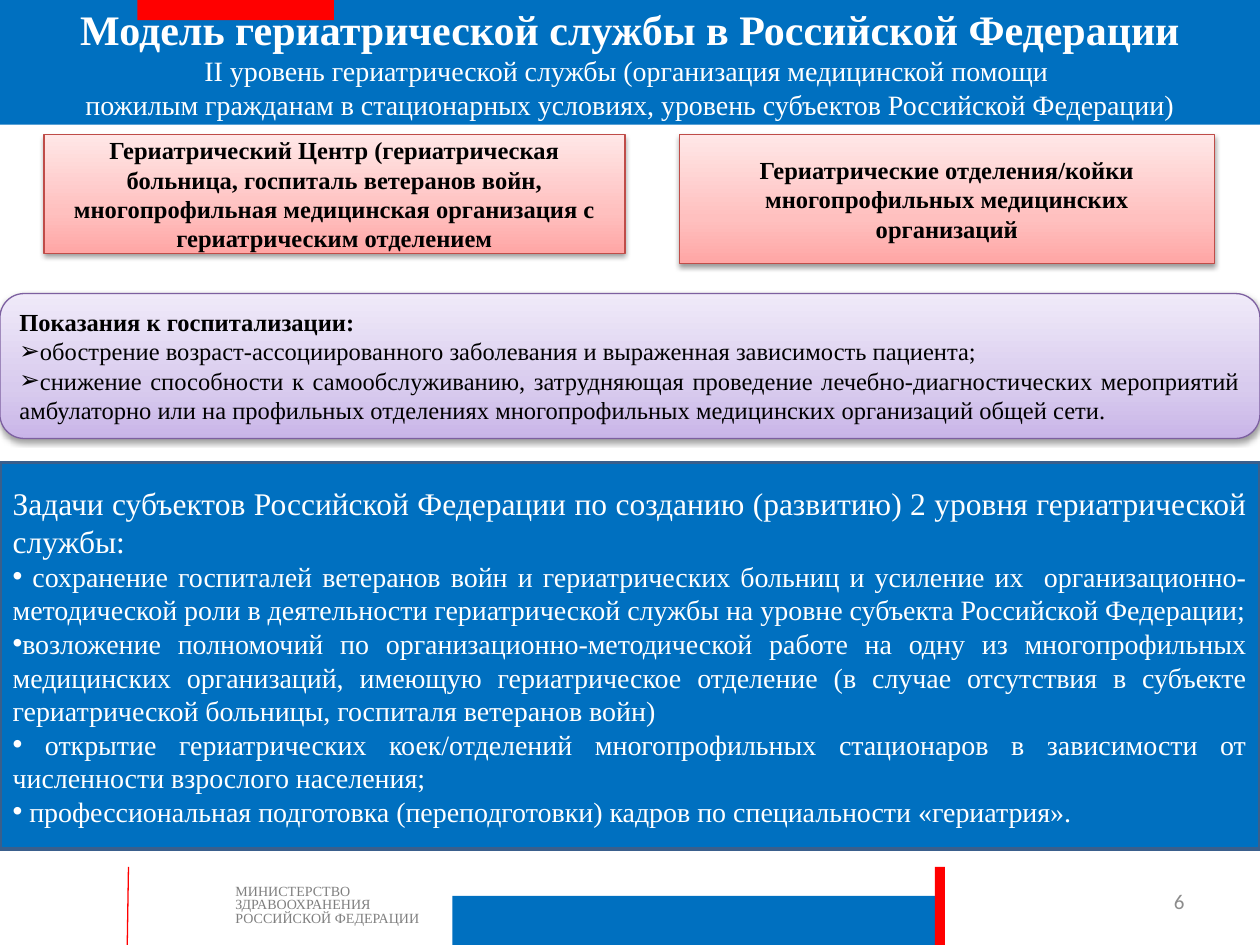
"""Build a slide on the second level of the geriatric service."""
from dataclasses import dataclass

from lxml import etree
from pptx import Presentation
from pptx.dml.color import RGBColor
from pptx.enum.shapes import MSO_CONNECTOR, MSO_SHAPE
from pptx.enum.text import MSO_ANCHOR, MSO_AUTO_SIZE, PP_ALIGN
from pptx.oxml.ns import qn
from pptx.util import Inches, Pt

RECT = MSO_SHAPE.RECTANGLE
ROUND = MSO_SHAPE.FLOWCHART_ALTERNATE_PROCESS
STRAIGHT = MSO_CONNECTOR.STRAIGHT
TOP, MIDDLE = MSO_ANCHOR.TOP, MSO_ANCHOR.MIDDLE
FIXED = MSO_AUTO_SIZE.NONE
LEFT, CENTER, RIGHT, JUSTIFY = PP_ALIGN.LEFT, PP_ALIGN.CENTER, PP_ALIGN.RIGHT, PP_ALIGN.JUSTIFY


@dataclass(frozen=True)
class Theme:
    """Hold the colours, fonts and type sizes."""
    blue: str = "0070C0"
    navy: str = "3A5F8C"
    red: str = "FF0000"
    white: str = "FFFFFF"
    black: str = "000000"
    gray: str = "7F7F7F"
    pale: str = "8C8C8C"
    rose: tuple = ("FFA6A5", "FFC0BF", "FFE7E7")
    rose_edge: str = "BF4C48"
    lilac: tuple = ("C9B5E8", "D8CBEE", "F0EAF9")
    lilac_edge: str = "7D60A0"
    serif: str = "Times New Roman"
    sans: str = "Calibri"
    head: float = 24
    lead: float = 18
    body: float = 16
    card: float = 14
    page: float = 12
    small: float = 8


@dataclass(frozen=True)
class Box:
    """Give a place in inches."""
    left: float
    top: float
    width: float
    height: float

    def place(self) -> tuple:
        """Return the place as lengths."""
        return tuple(Inches(v) for v in (self.left, self.top, self.width, self.height))


@dataclass(frozen=True)
class Line:
    """Describe one paragraph; a line feed is a line break."""
    text: str
    size: float
    color: str
    bold: bool = False
    bullet: str = ""
    font: str = "Times New Roman"
    space: float = 1.0


@dataclass(frozen=True)
class Card:
    """Describe a shaded card with text."""
    box: Box
    kind: int
    shades: tuple
    edge: str
    lines: tuple
    align: int
    anchor: int


T = Theme()
TITLE = (
    Line("Модель гериатрической службы в Российской Федерации", T.head, T.white, True),
    Line("II уровень гериатрической службы (организация медицинской помощи \n"
         "пожилым гражданам в стационарных условиях, уровень субъектов Российской Федерации)",
         T.body, T.white),
)
TASKS = (
    Line("Задачи субъектов Российской Федерации по созданию (развитию) 2 уровня "
         "гериатрической службы:", T.lead, T.white),
    *(Line(text, T.body, T.white, bullet="•") for text in (
        " сохранение госпиталей ветеранов войн и гериатрических больниц и усиление их  "
        "организационно-методической роли в деятельности гериатрической службы на уровне "
        "субъекта Российской Федерации;",
        "возложение полномочий по организационно-методической работе на одну из "
        "многопрофильных медицинских организаций, имеющую гериатрическое отделение (в случае "
        "отсутствия в субъекте гериатрической больницы, госпиталя ветеранов войн)",
        " открытие гериатрических коек/отделений многопрофильных стационаров в зависимости "
        "от численности взрослого населения;",
        " профессиональная подготовка (переподготовки) кадров по специальности «гериатрия».",
    )),
)
SIGNS = (
    Line("Показания к госпитализации:", T.card, T.black, True),
    *(Line(text, T.card, T.black, bullet="➢") for text in (
        "обострение возраст-ассоциированного заболевания и выраженная зависимость пациента;",
        "снижение способности к самообслуживанию, затрудняющая проведение "
        "лечебно-диагностических мероприятий амбулаторно или на профильных отделениях "
        "многопрофильных медицинских организаций общей сети.",
    )),
)
CENTRE = Line("Гериатрический Центр (гериатрическая больница, госпиталь ветеранов войн, "
              "многопрофильная медицинская организация с гериатрическим отделением",
              T.card, T.black, True)
WARDS = Line("Гериатрические отделения/койки многопрофильных медицинских организаций",
             T.card, T.black, True)
CARDS = (
    Card(Box(0, 2.33, 10, 1.15), ROUND, T.lilac, T.lilac_edge, SIGNS, JUSTIFY, TOP),
    Card(Box(0.35, 1.07, 4.61, 0.94), RECT, T.rose, T.rose_edge, (CENTRE,), CENTER, MIDDLE),
    Card(Box(5.39, 1.07, 4.25, 1.02), RECT, T.rose, T.rose_edge, (WARDS,), CENTER, MIDDLE),
)
BARS = (
    (Box(1.09, 0, 1.56, 0.16), T.red),
    (Box(3.59, 7.11, 3.91, 0.39), T.blue),
    (Box(7.42, 6.88, 0.08, 0.62), T.red),
)


def write(shape, lines: tuple, align: int, anchor: int) -> None:
    """Fill a shape with paragraphs."""
    frame = shape.text_frame
    frame.word_wrap = True
    frame.auto_size = FIXED
    frame.vertical_anchor = anchor
    for i, line in enumerate(lines):
        para = frame.add_paragraph() if i else frame.paragraphs[0]
        props = para._p.get_or_add_pPr()
        props.set("marL", "0")
        props.set("indent", "0")
        if line.bullet:
            etree.SubElement(props, qn("a:buFont"), typeface="Arial")
            etree.SubElement(props, qn("a:buChar"), char=line.bullet)
        else:
            etree.SubElement(props, qn("a:buNone"))
        para.alignment = align
        para.line_spacing = line.space
        para.space_before = Pt(0)
        for j, part in enumerate(line.text.split("\n")):
            if j:
                para.add_line_break()
            run = para.add_run()
            run.text = part
            run.font.name = line.font
            run.font.size = Pt(line.size)
            run.font.bold = line.bold
            run.font.color.rgb = RGBColor.from_string(line.color)


def paint(shape, color: str) -> None:
    """Give a shape a plain fill."""
    shape.fill.solid()
    shape.fill.fore_color.rgb = RGBColor.from_string(color)


def edge(line, color: str, width: float) -> None:
    """Set the colour and width of a line."""
    line.color.rgb = RGBColor.from_string(color)
    line.width = Pt(width)


def tint(parent, color: str):
    """Add a colour element."""
    return etree.SubElement(parent, qn("a:srgbClr"), val=color)


def move(shape, box: Box) -> None:
    """Move a placeholder to its box."""
    shape.left, shape.top, shape.width, shape.height = box.place()


def add_bar(slide, box: Box, color: str) -> None:
    """Draw a plain bar."""
    bar = slide.shapes.add_shape(RECT, *box.place())
    bar.shadow.inherit = False
    paint(bar, color)
    bar.line.fill.background()


def add_card(slide, card: Card) -> None:
    """Draw a shaded card with a soft shadow."""
    shape = slide.shapes.add_shape(card.kind, *card.box.place())
    shape.fill.gradient()
    shape.fill.gradient_angle = 90
    props = shape.element.spPr
    stops = props.find(".//" + qn("a:gsLst"))
    stops.clear()
    for spot, color in zip((0, 35, 100), card.shades):
        tint(etree.SubElement(stops, qn("a:gs"), pos=str(spot * 1000)), color)
    edge(shape.line, card.edge, 0.75)
    shape.shadow.inherit = False
    shade = etree.SubElement(props.find(qn("a:effectLst")), qn("a:outerShdw"),
                             blurRad=str(Pt(3.1)), dist=str(Pt(1.6)),
                             dir="5400000", rotWithShape="0")
    etree.SubElement(tint(shade, T.black), qn("a:alpha"), val="38000")
    write(shape, card.lines, card.align, card.anchor)


def add_label(slide, box: Box, line: Line, align: int, anchor: int) -> None:
    """Add a text box with one line."""
    write(slide.shapes.add_textbox(*box.place()), (line,), align, anchor)


def main() -> None:
    """Build and save the slide."""
    deck = Presentation()
    deck.slide_width, deck.slide_height = Inches(10), Inches(7.5)
    slide = deck.slides.add_slide(deck.slide_layouts[1])
    title, body = slide.placeholders
    move(title, Box(0, 0, 10, 0.99))
    paint(title, T.blue)
    write(title, TITLE, CENTER, MIDDLE)
    move(body, Box(0, 3.67, 10, 3.07))
    paint(body, T.blue)
    edge(body.line, T.navy, 2)
    write(body, TASKS, JUSTIFY, MIDDLE)
    for card in CARDS:
        add_card(slide, card)
    for box, color in BARS:
        add_bar(slide, box, color)
    rule = slide.shapes.add_connector(STRAIGHT, *Box(1.02, 6.88, 1.01, 7.5).place())
    edge(rule.line, T.red, 0.75)
    etree.SubElement(rule._element.spPr, qn("a:effectLst"))
    add_label(slide, Box(1.77, 6.98, 1.81, 0.39),
              Line("МИНИСТЕРСТВО ЗДРАВООХРАНЕНИЯ РОССИЙСКОЙ ФЕДЕРАЦИИ", T.small, T.gray,
                   space=0.8), LEFT, TOP)
    add_label(slide, Box(7.17, 6.95, 2.33, 0.4),
              Line("6", T.page, T.pale, font=T.sans), RIGHT, MIDDLE)
    deck.save("out.pptx")


if __name__ == "__main__":
    main()
